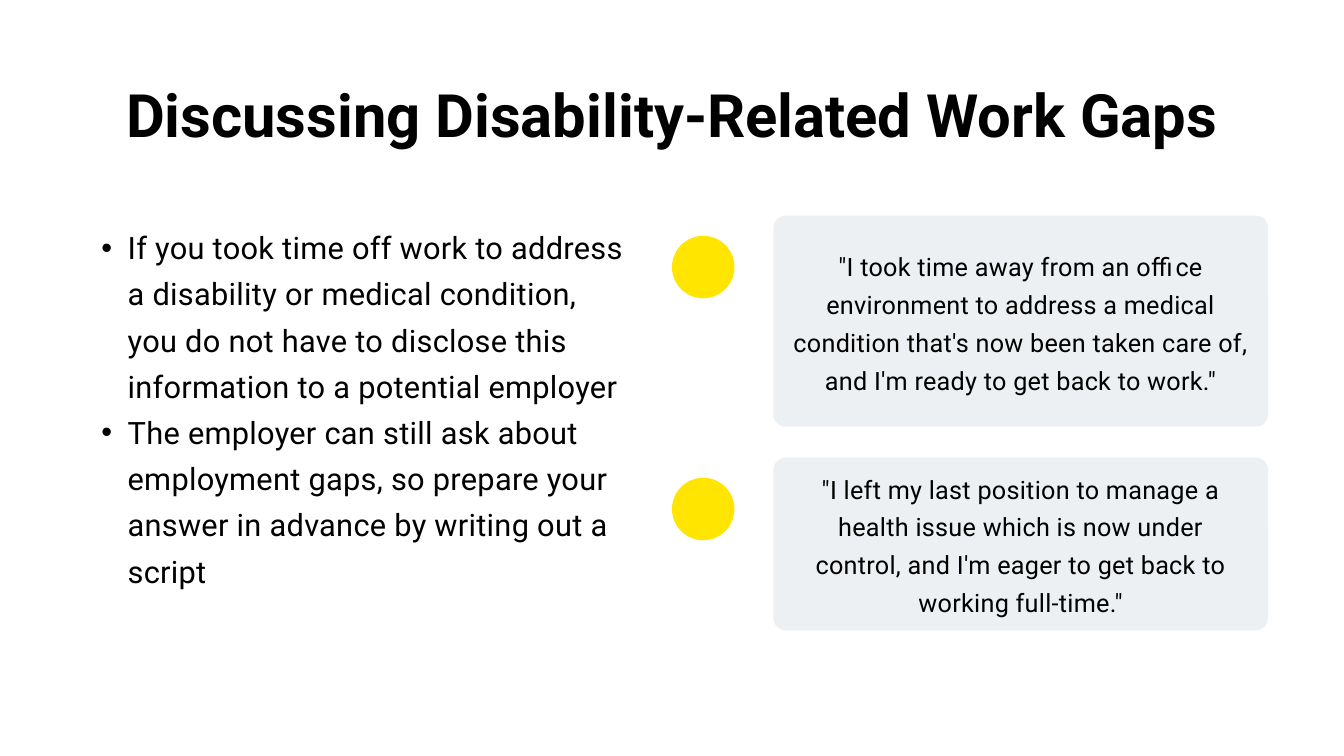
from pptx import Presentation
from pptx.dml.color import RGBColor
from pptx.enum import shapes, text
from pptx.oxml import ns
from pptx.util import Inches, Pt
from lxml import etree

COLORS = {"ink": "000000", "card": "EDF0F2", "dot": "FFE500"}


def write(shape, lines, size, lead, bold=False, space=0, bullet=False):
    """Fill a shape with one paragraph per line."""
    frame = shape.text_frame
    frame.word_wrap = True
    frame.auto_size = text.MSO_AUTO_SIZE.NONE
    frame.vertical_anchor = text.MSO_ANCHOR.TOP
    frame.margin_left = frame.margin_right = 0
    frame.margin_top = frame.margin_bottom = 0
    for i, line in enumerate(lines):
        para = frame.add_paragraph() if i else frame.paragraphs[0]
        para.alignment = text.PP_ALIGN.LEFT if bullet else text.PP_ALIGN.CENTER
        para.line_spacing = Pt(lead)
        para.space_before = Pt(0)
        run = para.add_run()
        run.text = line
        font = run.font
        font.name, font.size, font.bold = "Roboto", Pt(size), bold
        font.color.rgb = RGBColor.from_string(COLORS["ink"])
        if space:
            run._r.get_or_add_rPr().set("spc", str(round(space * 100)))
        if bullet:
            para.level = 1
            props = para._p.get_or_add_pPr()
            props.set("marL", str(Inches(0.78)))
            props.set("indent", str(Inches(-0.39)))
            etree.SubElement(props, ns.qn("a:buFont")).set("typeface", "Arial")
            etree.SubElement(props, ns.qn("a:buChar")).set("char", "•")


def draw(kind, left, top, width, height, color):
    """Add a plain filled shape."""
    shape = slide.shapes.add_shape(
        kind, Inches(left), Inches(top), Inches(width), Inches(height))
    shape.shadow.inherit = False
    shape.fill.solid()
    shape.fill.fore_color.rgb = RGBColor.from_string(COLORS[color])
    shape.line.fill.background()
    return shape


deck = Presentation()
deck.slide_width, deck.slide_height = Inches(20), Inches(11.25)
slide = deck.slides.add_slide(deck.slide_layouts[5])

# Title
title = slide.shapes.title
title.left, title.top = Inches(1.12), Inches(1.24)
title.width, title.height = Inches(17.75), Inches(1)
write(title, ["Discussing Disability-Related Work Gaps"], 64, 70.4, bold=True)

# Advice on the left
advice = slide.shapes.add_textbox(
    Inches(1.12), Inches(3.27), Inches(8.29), Inches(6.06))
write(advice, [
    "If you took time off work to address a disability or medical condition, "
    "you do not have to disclose this information to a potential employer",
    "The employer can still ask about employment gaps, so prepare your answer "
    "in advance by writing out a script",
], 33, 49.5, space=0.3, bullet=True)

# Sample answers: card top, card height, text top, wording
answers = [
    (3.21, 3.14, 3.63,
     "\"I took time away from an office environment to address a medical "
     "condition that's now been taken care of, and I'm ready to get back to "
     "work.\""),
    (6.81, 2.57, 6.94,
     "\"I left my last position to manage a health issue which is now under "
     "control, and I'm eager to get back to working full-time.\""),
]
for top, height, start, quote in answers:
    card = draw(shapes.MSO_SHAPE.ROUNDED_RECTANGLE,
                11.51, top, 7.36, height, "card")
    card.adjustments[0] = 0.18 / height
    draw(shapes.MSO_SHAPE.OVAL, 10, top + 0.3, 0.93, 0.93, "dot")
    box = slide.shapes.add_textbox(
        Inches(11.8), Inches(start), Inches(6.78), Inches(2.22))
    write(box, [quote], 27, 40.5, space=0.3)

deck.save("out.pptx")
